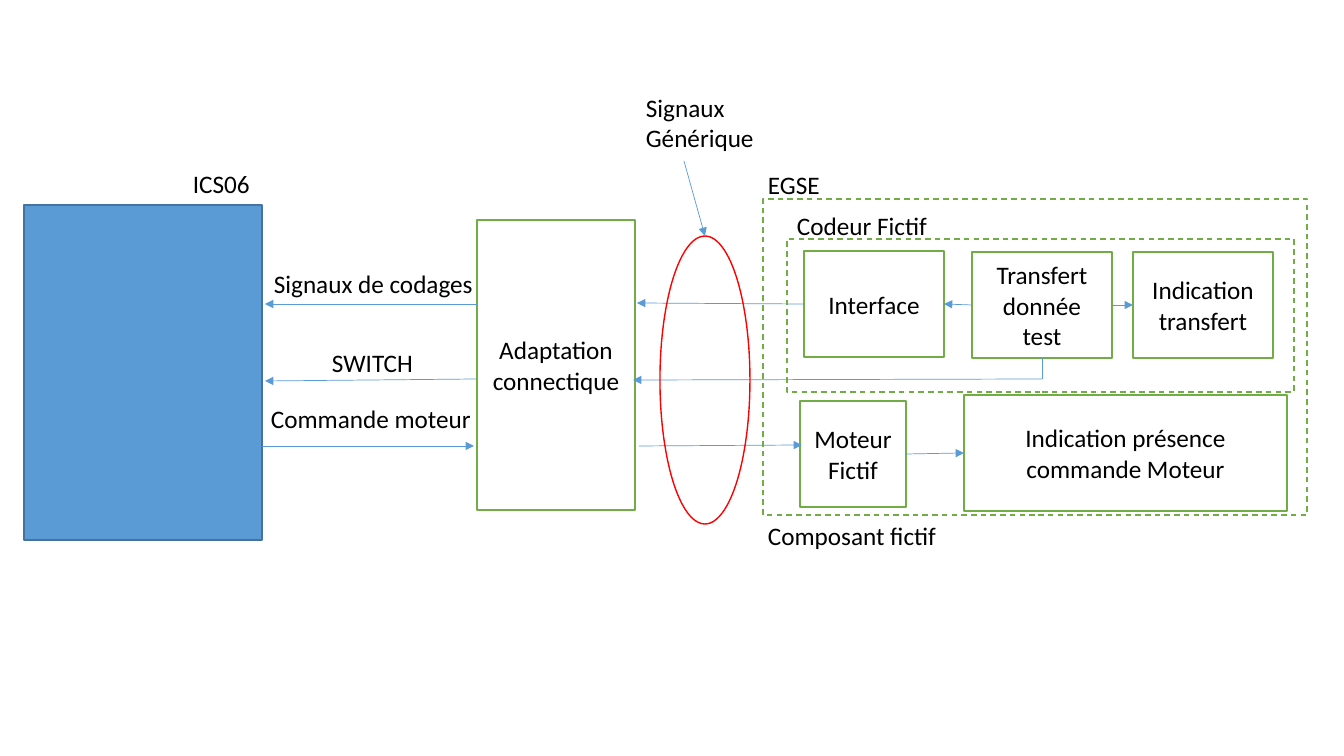
from lxml import etree
from pptx import Presentation
from pptx.dml.color import RGBColor
from pptx.enum.dml import MSO_LINE
from pptx.enum.shapes import MSO_CONNECTOR, MSO_SHAPE
from pptx.enum.text import MSO_ANCHOR, MSO_AUTO_SIZE, PP_ALIGN
from pptx.oxml.ns import qn
from pptx.util import Pt

BLUE = RGBColor(0x5B, 0x9B, 0xD5)
DARK_BLUE = RGBColor(0x43, 0x73, 0x9E)
GREEN = RGBColor(0x70, 0xAD, 0x47)
RED = RGBColor(0xFF, 0x00, 0x00)
BLACK = RGBColor(0x00, 0x00, 0x00)

RECTANGLE, ELLIPSE = MSO_SHAPE.RECTANGLE, MSO_SHAPE.OVAL
STRAIGHT, DASH = MSO_CONNECTOR.STRAIGHT, MSO_LINE.DASH
MIDDLE = MSO_ANCHOR.MIDDLE
LEFT, CENTER = PP_ALIGN.LEFT, PP_ALIGN.CENTER
GROW = MSO_AUTO_SIZE.SHAPE_TO_FIT_TEXT
TOP_SIDE, LEFT_SIDE, BOTTOM_SIDE, RIGHT_SIDE = range(4)

EMU_PER_PX = 914400 / 100.8


def px(*lengths):
    return [round(length * EMU_PER_PX) for length in lengths]


class Diagram:
    font, size = "Calibri", Pt(18)
    outline_width, arrow_width = Pt(1), Pt(0.5)

    def __init__(self, slide):
        self.slide = slide
        self.shapes = slide.shapes

    def open_group(self):
        """Place the elements that follow in a new group."""
        self.shapes = self.slide.shapes.add_group_shape().shapes

    def close_group(self):
        self.shapes = self.slide.shapes

    def add_text(self, text_frame, text, alignment):
        paragraph = text_frame.paragraphs[0]
        paragraph.alignment = alignment
        run = paragraph.add_run()
        run.text = text
        run.font.name, run.font.size = self.font, self.size
        run.font.color.rgb = BLACK

    def box(self, bounds, text="", kind=RECTANGLE, line=GREEN, fill=None, dash=None):
        shape = self.shapes.add_shape(kind, *px(*bounds))
        shape.shadow.inherit = False
        if fill is None:
            shape.fill.background()
        else:
            shape.fill.solid()
            shape.fill.fore_color.rgb = fill
        shape.line.color.rgb = line
        shape.line.width = self.outline_width
        if dash is not None:
            shape.line.dash_style = dash
        if text:
            shape.text_frame.word_wrap = True
            shape.text_frame.vertical_anchor = MIDDLE
            self.add_text(shape.text_frame, text, CENTER)
        return shape

    def label(self, bounds, text, wrap=False, alignment=LEFT):
        text_frame = self.shapes.add_textbox(*px(*bounds)).text_frame
        text_frame.word_wrap = wrap
        text_frame.auto_size = GROW
        self.add_text(text_frame, text, alignment)

    def arrow(self, start, end, begin=None, finish=None, head=True):
        """Draw from start to end; begin and finish are (shape, side) joints."""
        connector = self.shapes.add_connector(STRAIGHT, *px(*start, *end))
        if begin:
            connector.begin_connect(*begin)
        if finish:
            connector.end_connect(*finish)
        connector.line.color.rgb = BLUE
        connector.line.width = self.arrow_width
        properties = connector.element.spPr
        if head:
            etree.SubElement(properties.find(qn("a:ln")), qn("a:tailEnd"), type="triangle")
        etree.SubElement(properties, qn("a:effectLst"))


def build_equipment(diagram):
    diagram.label((183, 163, 78, 40), "ICS06")
    diagram.box((24, 205, 238, 335), line=DARK_BLUE, fill=BLUE)
    diagram.box((477, 220, 158, 290), "Adaptation connectique")
    diagram.label((264, 263, 222, 40), "Signaux de codages")
    diagram.label((322, 342, 102, 40), "SWITCH")
    diagram.label((261, 398, 223, 40), "Commande moteur")
    diagram.arrow((477, 304), (265, 304))
    diagram.arrow((476, 379), (265, 381))
    diagram.arrow((262, 446), (474, 446))


def build_encoder(diagram):
    diagram.open_group()
    diagram.box((787, 239, 507, 153), dash=DASH)
    interface = diagram.box((804, 251, 140, 106), "Interface")
    transfer = diagram.box((972, 252, 140, 106), "Transfert donnée test")
    indication = diagram.box((1133, 252, 140, 106), "Indication transfert")
    diagram.arrow((972, 305), (944, 304), (transfer, LEFT_SIDE), (interface, RIGHT_SIDE))
    diagram.arrow((1112, 305), (1133, 305), (transfer, RIGHT_SIDE), (indication, LEFT_SIDE))
    diagram.arrow((1042, 358), (1042, 379), (transfer, BOTTOM_SIDE), head=False)
    diagram.close_group()
    diagram.arrow((804, 304), (637, 303), (interface, LEFT_SIDE))
    diagram.arrow((1042, 379), (633, 380))
    diagram.label((786, 205, 152, 40), "Codeur Fictif", alignment=CENTER)


def build_test_bench(diagram):
    diagram.box((763, 199, 544, 316), dash=DASH)
    motor = diagram.box((800, 401, 106, 106), "Moteur Fictif")
    presence = diagram.box((964, 395, 323, 116), "Indication présence commande Moteur")
    diagram.arrow((906, 454), (964, 453), (motor, RIGHT_SIDE), (presence, LEFT_SIDE))
    diagram.arrow((639, 446), (802, 445))
    diagram.label((758, 164, 73, 40), "EGSE")
    diagram.label((758, 515, 190, 40), "Composant fictif")


def build_generic_signals(diagram):
    diagram.label((636, 87, 132, 71), "Signaux Générique", wrap=True)
    signals = diagram.box((660, 236, 90, 288), kind=ELLIPSE, line=RED)
    diagram.arrow((684, 161), (705, 236), finish=(signals, TOP_SIDE))


def main():
    presentation = Presentation()
    presentation.slide_width, presentation.slide_height = px(1344, 756)
    diagram = Diagram(presentation.slides.add_slide(presentation.slide_layouts[6]))
    build_equipment(diagram)
    build_encoder(diagram)
    build_test_bench(diagram)
    build_generic_signals(diagram)
    presentation.save("out.pptx")


if __name__ == "__main__":
    main()
